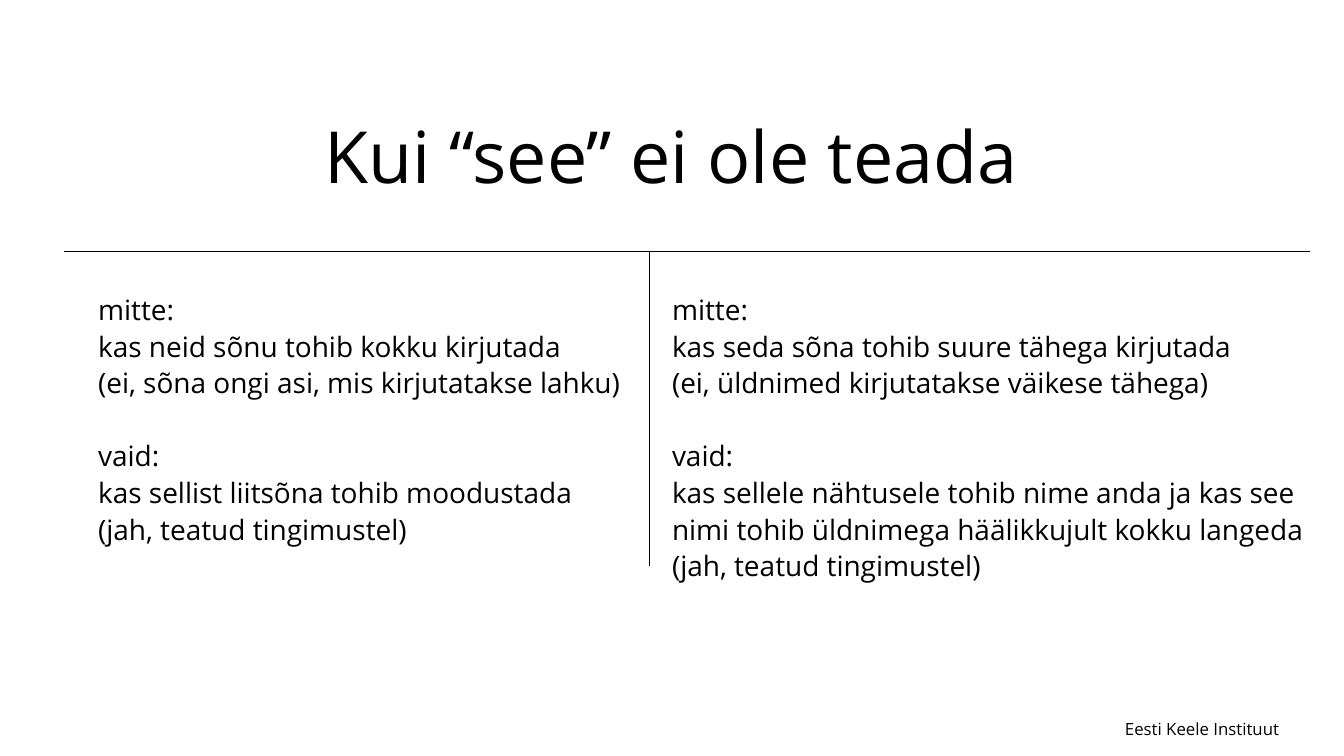
from dataclasses import dataclass

from lxml import etree
from pptx import Presentation
from pptx.dml.color import RGBColor
from pptx.enum.shapes import MSO_CONNECTOR
from pptx.enum.text import MSO_ANCHOR, MSO_AUTO_SIZE, PP_ALIGN
from pptx.oxml.ns import qn
from pptx.util import Pt

STRAIGHT = MSO_CONNECTOR.STRAIGHT
TOP = MSO_ANCHOR.TOP
NO_FIT = MSO_AUTO_SIZE.NONE
LEFT, CENTER = PP_ALIGN.LEFT, PP_ALIGN.CENTER


@dataclass(frozen=True)
class Theme:
    font: str = "Open Sans"
    ink: RGBColor = RGBColor(0, 0, 0)
    paper: RGBColor = RGBColor(255, 255, 255)
    title: float = 77
    title_line: float = 84.7
    body: float = 30
    body_line: float = 39.2
    footer: float = 18
    footer_line: float = 28.8
    rule: float = 0.75


def add_text(tf, text, *, theme, size, line, align=LEFT, before=0, first=False):
    p = tf.paragraphs[0] if first else tf.add_paragraph()
    p.alignment = align
    p.line_spacing = Pt(line)
    p.space_before = Pt(before)
    p.space_after = Pt(0)
    r = p.add_run()
    r.text = text
    r.font.name = theme.font
    r.font.size = Pt(size)
    r.font.color.rgb = theme.ink
    return p


class SlideBuilder:
    def __init__(self, slide, theme):
        self.s = slide
        self.theme = theme
        fill = slide.background.fill
        fill.solid()
        fill.fore_color.rgb = theme.paper

    def frame(self, sp, box):
        sp.left, sp.top, sp.width, sp.height = map(Pt, box)
        tf = sp.text_frame
        tf.margin_left = tf.margin_top = tf.margin_right = tf.margin_bottom = 0
        tf.word_wrap = True
        tf.auto_size = NO_FIT
        tf.vertical_anchor = TOP
        return tf

    def title(self, text, box):
        t = self.theme
        tf = self.frame(self.s.shapes.title, box)
        add_text(tf, text, theme=t, size=t.title, line=t.title_line,
                 align=CENTER, first=True)

    def column(self, idx, groups, box):
        t = self.theme
        tf = self.frame(self.s.placeholders[idx], box)
        for g, lines in enumerate(groups):
            for i, text in enumerate(lines):
                p = add_text(tf, text, theme=t, size=t.body, line=t.body_line,
                             before=t.body_line if g and not i else 0,
                             first=not (g or i))
                pPr = p._p.get_or_add_pPr()
                pPr.set("marL", "0")
                pPr.set("indent", "0")
                etree.SubElement(pPr, qn("a:buNone"))

    def footer(self, text, box):
        t = self.theme
        tf = self.frame(self.s.shapes.add_textbox(0, 0, 0, 0), box)
        add_text(tf, text, theme=t, size=t.footer, line=t.footer_line, first=True)

    def rule(self, x1, y1, x2, y2):
        c = self.s.shapes.add_connector(STRAIGHT, Pt(x1), Pt(y1), Pt(x2), Pt(y2))
        c.line.color.rgb = self.theme.ink
        c.line.width = Pt(self.theme.rule)
        etree.SubElement(c._element.spPr, qn("a:effectLst"))


def main():
    prs = Presentation()
    prs.slide_width, prs.slide_height = Pt(1440), Pt(810)
    slide = SlideBuilder(prs.slides.add_slide(prs.slide_layouts[3]), Theme())

    rule_y, divider_x, column_y, column_h = 269.6, 695.2, 310.3, 313
    slide.rule(divider_x, rule_y, divider_x, 606.2)
    slide.rule(68.4, rule_y, 1404, rule_y)

    slide.title("Kui “see” ei ole teada", (170, 127.4, 1099.4, 86.4))
    slide.column(1, [
        ["mitte:",
         "kas neid sõnu tohib kokku kirjutada",
         "(ei, sõna ongi asi, mis kirjutatakse lahku)"],
        ["vaid:",
         "kas sellist liitsõna tohib moodustada",
         "(jah, teatud tingimustel)"],
    ], (105.1, column_y, 582.5, column_h))
    slide.column(2, [
        ["mitte:",
         "kas seda sõna tohib suure tähega kirjutada",
         "(ei, üldnimed kirjutatakse väikese tähega)"],
        ["vaid:",
         "kas sellele nähtusele tohib nime anda ja kas see "
         "nimi tohib üldnimega häälikkujult kokku langeda",
         "(jah, teatud tingimustel)"],
    ], (720, column_y, 687.6, column_h))
    slide.footer("Eesti Keele Instituut", (1205.3, 763.2, 185, 26.6))

    prs.save("out.pptx")


if __name__ == "__main__":
    main()
